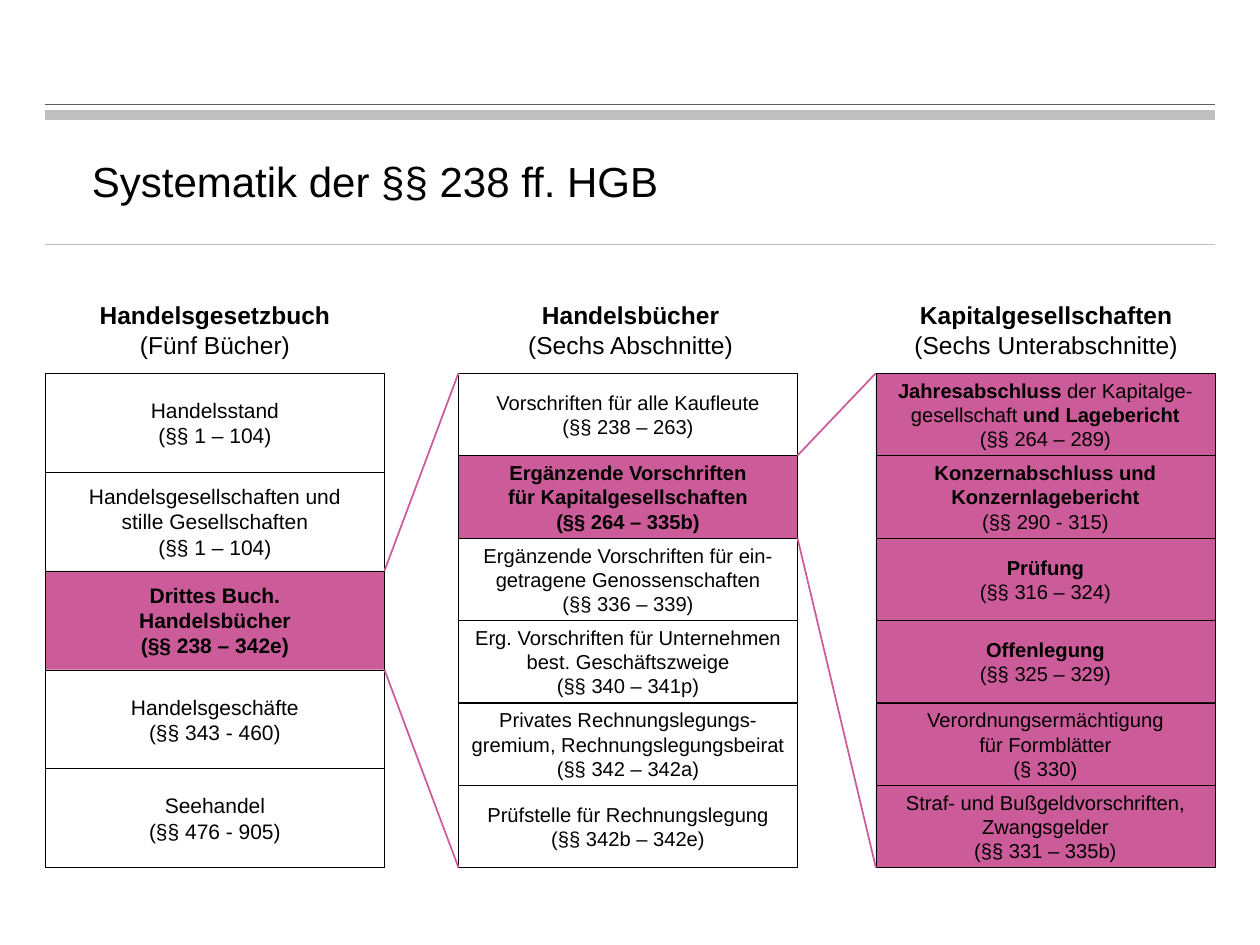
from pptx import Presentation
from pptx.dml.color import RGBColor
from pptx.enum.shapes import MSO_CONNECTOR, MSO_SHAPE
from pptx.enum.text import MSO_ANCHOR, PP_ALIGN
from pptx.oxml.ns import qn
from pptx.util import Pt
from lxml import etree

STRAIGHT = MSO_CONNECTOR.STRAIGHT
RECT = MSO_SHAPE.RECTANGLE
MIDDLE, TOP = MSO_ANCHOR.MIDDLE, MSO_ANCHOR.TOP
LEFT, CENTER = PP_ALIGN.LEFT, PP_ALIGN.CENTER

THEME = {
    "font": "Arial",
    "ink": RGBColor(0x00, 0x00, 0x00),
    "accent": RGBColor(0xCC, 0x5C, 0x99),
    "dark_rule": RGBColor(0x5F, 0x5F, 0x5F),
    "light_rule": RGBColor(0xC0, 0xC0, 0xC0),
    "title": 24,
    "heading": 14,
}

TITLE = "Systematik der §§ 238 ff. HGB"

COLUMNS = [
    {
        "left": 26, "heading_left": 26, "size": 12, "filled": [2], "zoom": 2,
        "heading": "*Handelsgesetzbuch*\n(Fünf Bücher)",
        "boxes": [
            "Handelsstand\n(§§ 1 – 104)",
            "Handelsgesellschaften und\nstille Gesellschaften\n(§§ 1 – 104)",
            "*Drittes Buch.\nHandelsbücher\n(§§ 238 – 342e)*",
            "Handelsgeschäfte\n(§§ 343 - 460)",
            "Seehandel\n(§§ 476 - 905)",
        ],
    },
    {
        "left": 262, "heading_left": 263.5, "size": 11.5, "filled": [1], "zoom": 1,
        "heading": "*Handelsbücher*\n(Sechs Abschnitte)",
        "boxes": [
            "Vorschriften für alle Kaufleute\n(§§ 238 – 263)",
            "*Ergänzende Vorschriften\nfür Kapitalgesellschaften\n(§§ 264 – 335b)*",
            "Ergänzende Vorschriften für ein-\ngetragene Genossenschaften\n(§§ 336 – 339)",
            "Erg. Vorschriften für Unternehmen best. Geschäftszweige\n(§§ 340 – 341p)",
            "Privates Rechnungslegungs-\ngremium, Rechnungslegungsbeirat\n(§§ 342 – 342a)",
            "Prüfstelle für Rechnungslegung\n(§§ 342b – 342e)",
        ],
    },
    {
        "left": 500.5, "heading_left": 501, "size": 11.5, "filled": range(6),
        "heading": "*Kapitalgesellschaften*\n(Sechs Unterabschnitte)",
        "boxes": [
            "*Jahresabschluss *der Kapitalge-\ngesellschaft* und Lagebericht*\n(§§ 264 – 289)",
            "*Konzernabschluss und\nKonzernlagebericht*\n(§§ 290 - 315)",
            "*Prüfung*\n(§§ 316 – 324)",
            "*Offenlegung*\n(§§ 325 – 329)",
            "Verordnungsermächtigung\nfür Formblätter\n(§ 330)",
            "Straf- und Bußgeldvorschriften,\nZwangsgelder\n(§§ 331 – 335b)",
        ],
    },
]

RULES = [(59.5, "dark_rule", 0.5), (65.75, "light_rule", 6), (139.75, "light_rule", 0.5)]
RULE_LEFT, RULE_RIGHT = 25.5, 694.5
BOX_WIDTH = 193.7
STACK_TOP, STACK_HEIGHT = 213.25, 282.5
HEADING_TOP, HEADING_HEIGHT = 168, 41


def write(sp, text, size, align=CENTER, anchor=MIDDLE, inset=5):
    tf = sp.text_frame
    tf.word_wrap = True
    tf.vertical_anchor = anchor
    tf.margin_left, tf.margin_right = Pt(inset), Pt(5)
    tf.margin_top = tf.margin_bottom = Pt(3.6)
    p = tf.paragraphs[0]
    p.alignment = align
    p.font.name = THEME["font"]
    p.font.size = Pt(size)
    p.font.color.rgb = THEME["ink"]
    for i, part in enumerate(text.split("*")):
        for j, line in enumerate(part.split("\n")):
            if j:
                p.add_line_break()
            if line:
                r = p.add_run()
                r.text = line
                r.font.bold = i % 2 == 1


def add_text(s, left, top, width, height, text, size, **layout):
    sp = s.shapes.add_textbox(Pt(left), Pt(top), Pt(width), Pt(height))
    write(sp, text, size, **layout)


def add_box(s, left, top, height, text, size, filled):
    sp = s.shapes.add_shape(RECT, Pt(left), Pt(top), Pt(BOX_WIDTH), Pt(height))
    sp.shadow.inherit = False
    if filled:
        sp.fill.solid()
        sp.fill.fore_color.rgb = THEME["accent"]
    else:
        sp.fill.background()
    sp.line.color.rgb = THEME["ink"]
    sp.line.width = Pt(0.25)
    write(sp, text, size)


def add_line(s, x1, y1, x2, y2, color, width):
    line = s.shapes.add_connector(STRAIGHT, Pt(x1), Pt(y1), Pt(x2), Pt(y2))
    line.line.color.rgb = THEME[color]
    line.line.width = Pt(width)
    etree.SubElement(line._element.spPr, qn("a:effectLst"))


def main():
    prs = Presentation()
    prs.slide_width, prs.slide_height = Pt(720), Pt(540)
    s = prs.slides.add_slide(prs.slide_layouts[6])

    for y, color, width in RULES:
        add_line(s, RULE_LEFT, y, RULE_RIGHT, y, color, width)
    add_text(s, 24.5, 69, 669, 68, TITLE, THEME["title"], align=LEFT, inset=28)

    for col in COLUMNS:
        add_text(s, col["heading_left"], HEADING_TOP, BOX_WIDTH, HEADING_HEIGHT,
                 col["heading"], THEME["heading"], anchor=TOP)
        height = STACK_HEIGHT / len(col["boxes"])
        for i, text in enumerate(col["boxes"]):
            add_box(s, col["left"], STACK_TOP + i * height, height,
                    text, col["size"], i in col["filled"])

    for col, detail in zip(COLUMNS, COLUMNS[1:]):
        height = STACK_HEIGHT / len(col["boxes"])
        right = col["left"] + BOX_WIDTH
        zoom_top = STACK_TOP + col["zoom"] * height
        for y, end in ((zoom_top, STACK_TOP),
                       (zoom_top + height, STACK_TOP + STACK_HEIGHT)):
            add_line(s, right, y, detail["left"], end, "accent", 1)

    prs.save("out.pptx")


if __name__ == "__main__":
    main()
